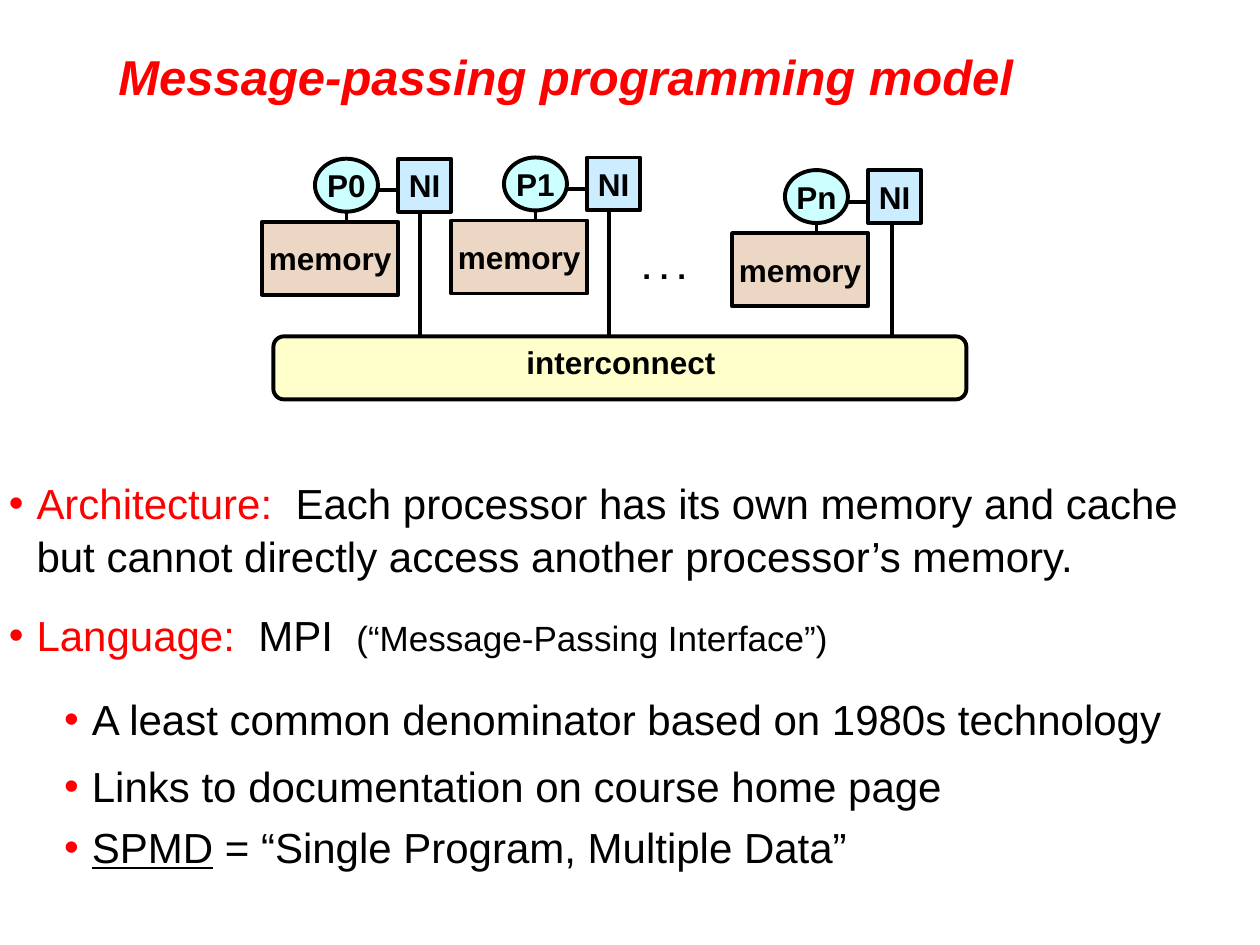
import pptx
import pptx.util
import pptx.dml.color
import pptx.enum.shapes
import pptx.enum.text
import pptx.oxml
from lxml import etree

Inches, Pt = pptx.util.Inches, pptx.util.Pt
SHAPE = pptx.enum.shapes.MSO_SHAPE
ANCHOR = pptx.enum.text.MSO_ANCHOR
ALIGN = pptx.enum.text.PP_ALIGN
COLORS = {"accent": "FF0000", "ink": "000000", "processor": "CCFFFF",
          "memory": "EBD7C3", "interface": "CCECFF", "interconnect": "FFFFCC"}


def rgb(name):
    return pptx.dml.color.RGBColor.from_string(COLORS[name])


class SlideStyle:
    font = "Arial"
    label_size = 18
    line_width = 2.25

    def __init__(self, slide):
        self.slide = slide

    def format_run(self, run, size, color="ink", bold=False, italic=False, underline=False):
        font = run.font
        font.name, font.size, font.color.rgb = self.font, Pt(size), rgb(color)
        font.bold, font.italic, font.underline = bold, italic, underline

    def set_insets(self, frame):
        frame.margin_left = frame.margin_right = Inches(0.07)
        frame.margin_top = frame.margin_bottom = Inches(0.03)

    def title(self, text, left, top, width, height):
        title = self.slide.shapes.title
        title.left, title.top = Inches(left), Inches(top)
        title.width, title.height = Inches(width), Inches(height)
        frame = title.text_frame
        frame.text = text
        self.set_insets(frame)
        frame.word_wrap = False
        frame.auto_size = pptx.enum.text.MSO_AUTO_SIZE.NONE
        frame.vertical_anchor = ANCHOR.MIDDLE
        frame.paragraphs[0].alignment = ALIGN.LEFT
        self.format_run(frame.paragraphs[0].runs[0], 28, "accent", bold=True, italic=True)

    def box(self, kind, left, top, width, height, fill, text=""):
        box = self.slide.shapes.add_shape(
            kind, Inches(left), Inches(top), Inches(width), Inches(height))
        box.shadow.inherit = False
        box.fill.solid()
        box.fill.fore_color.rgb = rgb(fill)
        box.line.color.rgb = rgb("ink")
        box.line.width = Pt(self.line_width)
        if text:
            frame = box.text_frame
            frame.text = text
            frame.word_wrap = False
            frame.vertical_anchor = ANCHOR.MIDDLE
            frame.paragraphs[0].alignment = ALIGN.CENTER
            self.format_run(frame.paragraphs[0].runs[0], self.label_size, bold=True)

    def label(self, text, left, top, width, height):
        label = self.slide.shapes.add_textbox(
            Inches(left), Inches(top), Inches(width), Inches(height))
        label.text_frame.text = text
        label.text_frame.word_wrap = True
        self.format_run(label.text_frame.paragraphs[0].runs[0], self.label_size, bold=True)

    def line(self, x1, y1, x2, y2):
        line = self.slide.shapes.add_connector(
            pptx.enum.shapes.MSO_CONNECTOR.STRAIGHT,
            Inches(x1), Inches(y1), Inches(x2), Inches(y2))
        line.line.color.rgb = rgb("ink")
        line.line.width = Pt(self.line_width)
        etree.SubElement(line._element.spPr, pptx.oxml.ns.qn("a:effectLst"))

    def node(self, processor, left, top, bus_x, bus_y):
        """A processor with its memory and network interface, wired to the bus."""
        side, memory_top, interface_left = 0.42, top + 0.5, left + 1.08
        self.box(SHAPE.OVAL, left + 0.42, top, 0.5, side, "processor", processor)
        self.box(SHAPE.RECTANGLE, left, memory_top, 1.08, 0.58, "memory", "memory")
        self.box(SHAPE.RECTANGLE, interface_left, top, side, side, "interface", "NI")
        self.line(left + 0.67, top + side, left + 0.67, memory_top)
        self.line(left + 0.92, top + 0.25, interface_left, top + 0.25)
        self.line(bus_x, top + side, bus_x, bus_y)

    def bullets(self, items, left, top, width, height):
        body = self.slide.shapes.add_textbox(
            Inches(left), Inches(top), Inches(width), Inches(height))
        frame = body.text_frame
        frame.word_wrap = True
        self.set_insets(frame)
        for index, (level, before, after, parts) in enumerate(items):
            paragraph = frame.paragraphs[0] if index == 0 else frame.add_paragraph()
            paragraph.level = level
            paragraph.line_spacing = 1.05
            paragraph.space_before, paragraph.space_after = Pt(before), Pt(after)
            for text, style in parts:
                run = paragraph.add_run()
                run.text = text
                self.format_run(run, **{"size": 24, **style})
            self.bullet_mark(paragraph, 0.22 + 0.44 * level)

    def bullet_mark(self, paragraph, margin):
        properties = paragraph._p.get_or_add_pPr()
        properties.set("marL", str(Inches(margin)))
        properties.set("indent", str(Inches(-0.22)))
        qn = pptx.oxml.ns.qn
        color = etree.SubElement(properties, qn("a:buClr"))
        etree.SubElement(color, qn("a:srgbClr"), val=COLORS["accent"])
        etree.SubElement(properties, qn("a:buFont"), typeface=self.font)
        etree.SubElement(properties, qn("a:buChar"), char="•")


def main():
    deck = pptx.Presentation()
    deck.slide_width, deck.slide_height = Inches(10), Inches(7.5)
    page = SlideStyle(deck.slides.add_slide(deck.slide_layouts[5]))

    page.title("Message-passing programming model", 0.87, 0.34, 7.41, 0.53)

    # Interconnect and the nodes attached to it
    bus_y = 2.67
    page.box(SHAPE.ROUNDED_RECTANGLE, 2.17, bus_y, 5.5, 0.5, "interconnect")
    page.label("interconnect", 4.08, bus_y, 1.75, 0.4)
    for processor, left, top, bus_x in [("P0", 2.08, 1.26, 3.33),
                                        ("P1", 3.58, 1.25, 4.83),
                                        ("Pn", 5.81, 1.35, 7.08)]:
        page.node(processor, left, top, bus_x, bus_y)
    page.label(". . .", 5, 1.92, 0.75, 0.4)

    # Explanation: level, space before, space after, runs
    red = {"color": "accent"}
    page.bullets([
        (0, 0, 0, [("Architecture:  ", red),
                   ("Each processor has its own memory and cache but cannot "
                    "directly access another processor’s memory.", {})]),
        (0, 15, 3, [("Language:  ", red), ("MPI  ", {}),
                    ("(“Message-Passing Interface”)", {"size": 20})]),
        (1, 15, 3, [("A least common denominator based on 1980s technology", {})]),
        (1, 4.8, 0, [("Links to documentation on course home page", {})]),
        (1, 4.8, 0, [("SPMD", {"underline": True}),
                     (" = “Single Program, Multiple Data”", {})]),
    ], 0, 3.74, 9.83, 3.79)

    deck.save("out.pptx")


if __name__ == "__main__":
    main()
